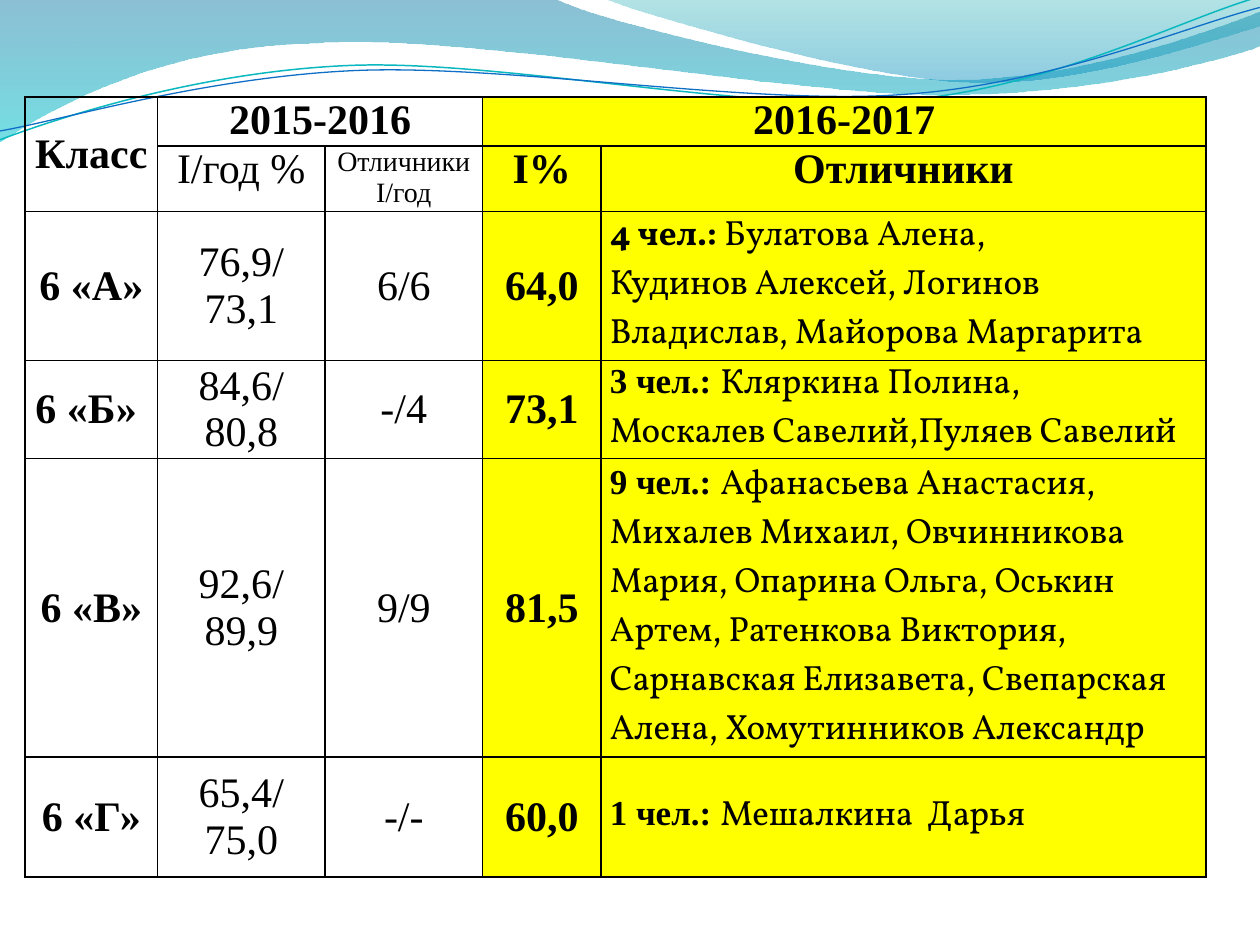
from dataclasses import dataclass
from math import cos, radians, sin

from lxml.etree import SubElement
from pptx import Presentation
from pptx.dml.color import RGBColor
from pptx.enum.text import MSO_ANCHOR, PP_ALIGN
from pptx.oxml import parse_xml
from pptx.oxml.ns import nsdecls, qn
from pptx.util import Inches, Pt


@dataclass(frozen=True)
class Theme:
    ink: str = "000000"
    paper: str = "FFFFFF"
    highlight: str = "FFFF00"
    wide_wave: tuple = (("0074A1", 45), ("00C6CF", 55))
    corner_wave: tuple = (("00A1A9", 30), ("008BBF", 45))
    teal_line: tuple = ("0AB8BF", 0.85)
    blue_line: tuple = ("0F6FC6", 0.75)
    main_font: str = "Times New Roman"
    names_font: str = "Vollkorn"
    main_size: int = 24
    names_size: int = 20
    small_size: int = 16
    border: int = 1


THEME = Theme()
STRAND_TILT = 357.3

WIDE_WAVE = [
    (0, 0), (4.4, -0.01),
    (4.76, 0.17, 6.64, 0.63, 7.58, 0.63), (8.53, 0.63, 9.58, 0.26, 10, 0.09),
    (10.01, 0.36),
    (9.83, 0.44, 8.7, 0.76, 7.46, 0.75), (6.22, 0.75, 3.82, 0.28, 2.57, 0.34),
    (1.29, 0.36, 0.46, 0.83, -0.01, 1.13),
]
CORNER_WAVE = [
    (4.79, -0.01),
    (5.09, 0.11, 6.82, 0.62, 7.69, 0.65), (8.56, 0.69, 9.61, 0.32, 10, 0.21),
    (10, 0),
]
TEAL_LINE = [
    (0, 1.11),
    (0.48, 0.93, 1.58, 0.57, 2.77, 0.52), (3.95, 0.47, 5.93, 0.89, 7.13, 0.8),
    (8.33, 0.71, 9.38, 0.15, 9.98, -0.02),
]
BLUE_LINE = [
    (0, 1.04),
    (0.47, 0.96, 1.64, 0.61, 2.83, 0.56), (4.03, 0.51, 5.97, 0.84, 7.17, 0.75),
    (8.36, 0.67, 9.41, 0.21, 10, 0.06),
]

COLUMN_WIDTHS = [1.05, 1.33, 1.25, 0.94, 4.8]
ROW_HEIGHTS = [0.39, 0.52, 1.18, 0.78, 2.37, 0.95]
FIRST_HIGHLIGHT_COLUMN = 3

CLASSES = [
    ("6 «А»", "76,9/\n73,1", "6/6", "64,0", "4 чел.: ", THEME.names_font,
     ["Булатова Алена,", "Кудинов Алексей, Логинов Владислав, Майорова Маргарита"]),
    ("6 «Б» ", "84,6/\n80,8", "-/4", "73,1", "3 чел.: ", THEME.main_font,
     ["Кляркина Полина,", "Москалев Савелий,Пуляев Савелий"]),
    ("6 «В»", "92,6/\n89,9", "9/9", "81,5", "9 чел.: ", THEME.main_font,
     ["Афанасьева Анастасия, Михалев Михаил, Овчинникова Мария, Опарина Ольга, "
      "Оськин Артем, Ратенкова Виктория, Сарнавская Елизавета, Свепарская Алена, "
      "Хомутинников Александр"]),
    ("6 «Г»", "65,4/\n75,0", "-/-", "60,0", "1 чел.: ", THEME.main_font,
     ["Мешалкина  Дарья"]),
]


def color(value):
    return RGBColor.from_string(value)


def turn(point, pivot, angle):
    dx, dy = point[0] - pivot[0], point[1] - pivot[1]
    c, s = cos(radians(angle)), sin(radians(angle))
    return pivot[0] + dx * c - dy * s, pivot[1] + dx * s + dy * c


def bend_segments(outline, segments):
    steps = iter(list(outline.element.spPr.iter(qn("a:lnTo"))))
    for segment in segments[1:]:
        first = next(steps)
        if len(segment) == 6:
            first.tag = qn("a:cubicBezTo")
            for step in (next(steps), next(steps)):
                first.append(step[0])
                step.getparent().remove(step)


def add_outline(slide, left, top, segments, closed, tilt=0):
    points = [pair for segment in segments for pair in zip(segment[::2], segment[1::2])]
    pivot = [(min(axis) + max(axis)) / 2 for axis in zip(*points)]
    points = [turn(point, pivot, -tilt) for point in points]
    placed = [(Inches(left + x), Inches(top + y)) for x, y in points]
    builder = slide.shapes.build_freeform(*placed[0])
    builder.add_line_segments(placed[1:], close=closed)
    outline = builder.convert_to_shape()
    bend_segments(outline, segments)
    outline.rotation = tilt
    outline.shadow.inherit = False
    return outline


def add_waves(slide, left, top):
    for segments, stops in ((WIDE_WAVE, THEME.wide_wave), (CORNER_WAVE, THEME.corner_wave)):
        wave = add_outline(slide, left, top, segments, True)
        wave.line.fill.background()
        wave.fill.gradient()
        wave.fill.gradient_angle = 270
        for position, (stop, (tint, _)) in enumerate(zip(wave.fill.gradient_stops, stops)):
            stop.position = position
            stop.color.rgb = color(tint)
        tints = list(wave.element.spPr.iter(qn("a:srgbClr")))
        for tint, (_, opacity) in zip(tints, stops):
            SubElement(tint, qn("a:alpha"), val=str(opacity * 1000))

    for segments, (tint, width) in ((TEAL_LINE, THEME.teal_line), (BLUE_LINE, THEME.blue_line)):
        strand = add_outline(slide, left, top, segments, False, STRAND_TILT)
        strand.fill.background()
        strand.line.color.rgb = color(tint)
        strand.line.width = Pt(width)


def format_run(run, size, bold, font):
    run.font.size = Pt(size)
    run.font.bold = bold
    run.font.name = font
    run.font.color.rgb = color(THEME.ink)


def write_cell(cell, text, size=THEME.main_size, bold=False, anchor=MSO_ANCHOR.MIDDLE):
    cell.text_frame.text = text
    cell.vertical_anchor = anchor
    for paragraph in cell.text_frame.paragraphs:
        paragraph.alignment = PP_ALIGN.CENTER
        for run in paragraph.runs:
            format_run(run, size, bold, THEME.main_font)


def write_students(cell, count, count_font, names):
    cell.vertical_anchor = MSO_ANCHOR.MIDDLE
    frame = cell.text_frame
    frame.text = count
    format_run(frame.paragraphs[0].runs[0], THEME.names_size, True, count_font)
    for index, line in enumerate(names):
        paragraph = frame.add_paragraph() if index else frame.paragraphs[0]
        run = paragraph.add_run()
        run.text = line
        format_run(run, THEME.names_size, False, THEME.names_font)


def style_cell(cell, fill):
    cell.margin_left = cell.margin_right = Inches(0.07)
    cell.margin_top = cell.margin_bottom = 0
    if fill:
        cell.fill.solid()
        cell.fill.fore_color.rgb = color(fill)
    else:
        cell.fill.background()
    properties = cell._tc.get_or_add_tcPr()
    for index, side in enumerate(("lnL", "lnR", "lnT", "lnB")):
        properties.insert(index, parse_xml(
            f'<a:{side} {nsdecls("a")} w="{Pt(THEME.border)}"><a:solidFill>'
            f'<a:srgbClr val="{THEME.ink}"/></a:solidFill></a:{side}>'))


def cell_fill(row, column):
    if column >= FIRST_HIGHLIGHT_COLUMN:
        return THEME.highlight
    return THEME.paper if row >= 2 and column else None


def write_header(table):
    for first, last in (((0, 0), (1, 0)), ((0, 1), (0, 2)), ((0, 3), (0, 4))):
        table.cell(*first).merge(table.cell(*last))
    write_cell(table.cell(0, 0), "Класс", bold=True)
    top = MSO_ANCHOR.TOP
    write_cell(table.cell(0, 1), "2015-2016", bold=True, anchor=top)
    write_cell(table.cell(0, 3), "2016-2017", bold=True, anchor=top)
    write_cell(table.cell(1, 1), "I/год %", anchor=top)
    write_cell(table.cell(1, 2), "Отличники\nI/год", THEME.small_size, anchor=top)
    write_cell(table.cell(1, 3), "I%", bold=True, anchor=top)
    write_cell(table.cell(1, 4), "Отличники", bold=True, anchor=top)


def add_results(slide, left, top, width, height):
    table = slide.shapes.add_table(
        len(ROW_HEIGHTS), len(COLUMN_WIDTHS),
        Inches(left), Inches(top), Inches(width), Inches(height)).table
    table.first_row = table.horz_banding = False
    for column, column_width in zip(table.columns, COLUMN_WIDTHS):
        column.width = Inches(column_width)
    for row, row_height in zip(table.rows, ROW_HEIGHTS):
        row.height = Inches(row_height)
    write_header(table)
    for row, (label, quality, excellent, rate, *students) in enumerate(CLASSES, 2):
        write_cell(table.cell(row, 0), label, bold=True)
        write_cell(table.cell(row, 1), quality)
        write_cell(table.cell(row, 2), excellent)
        write_cell(table.cell(row, 3), rate, bold=True)
        write_students(table.cell(row, 4), *students)
    for row in range(len(ROW_HEIGHTS)):
        for column in range(len(COLUMN_WIDTHS)):
            style_cell(table.cell(row, column), cell_fill(row, column))


def main():
    deck = Presentation()
    deck.slide_width, deck.slide_height = Inches(10), Inches(7.5)
    slide = deck.slides.add_slide(deck.slide_layouts[6])
    add_waves(slide, 0, 0)
    add_results(slide, 0.2, 0.77, sum(COLUMN_WIDTHS), sum(ROW_HEIGHTS))
    deck.save("out.pptx")


if __name__ == "__main__":
    main()
